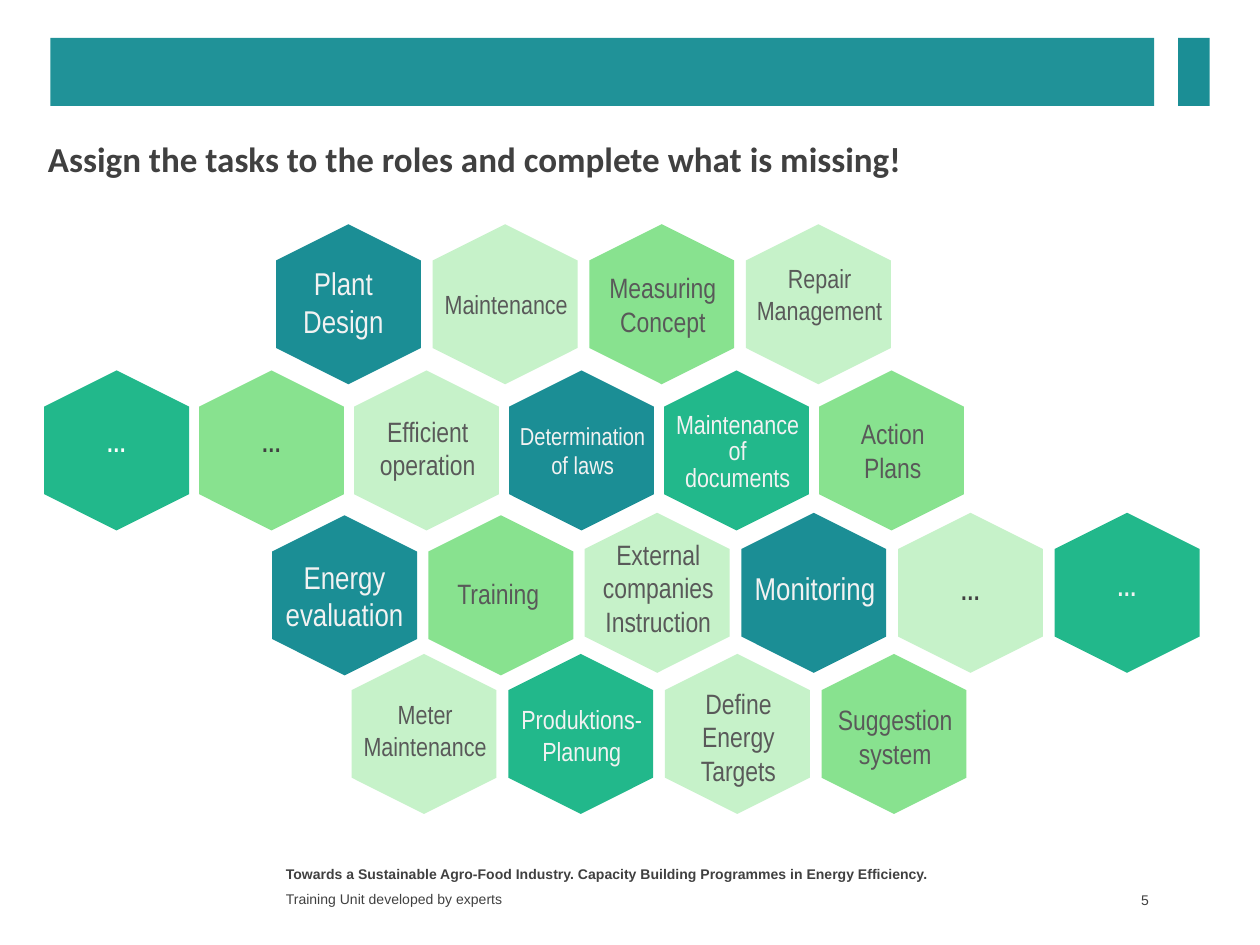
from dataclasses import dataclass
from typing import Optional

from pptx import Presentation
from pptx.dml.color import RGBColor
from pptx.enum.shapes import MSO_SHAPE
from pptx.enum.text import MSO_ANCHOR, PP_ALIGN
from pptx.util import Inches, Pt

TEAL, GREEN, LIME, MINT = "1B8E95", "22B88B", "88E28F", "C6F2C9"
DARK, GREY, PALE = "404040", "595959", "F2F2F2"
HEX_W, HEX_H = 1.27, 1.15
WIDE, NARROW = 1.36, 1.12


@dataclass
class Tile:
    fill: str
    text: str
    size: int = 16
    dy: float = 0
    dx: float = 0.01
    color: Optional[str] = None
    bold: bool = False
    spacing: Optional[int] = None


def dots(fill, color, dy):
    return Tile(fill, "…", 14, dy, 0, color, True)


ROWS = [
    ((2.13, 1.84, 5.0, HEX_H), [
        Tile(TEAL, "Plant Design", 18, -0.02, -0.04),
        Tile(MINT, "Maintenance", 15),
        Tile(LIME, "Measuring\nConcept"),
        Tile(MINT, "Repair\nManagement", 15, -0.08),
    ]),
    ((0.29, 3.0, 7.42, HEX_H), [
        dots(GREEN, "FFFFFF", -0.06),
        dots(LIME, DARK, -0.06),
        Tile(MINT, "Efficient\noperation", dy=-0.02),
        Tile(TEAL, "Determination\nof laws", 14),
        Tile(GREEN, "Maintenance\nof\ndocuments", 15, 0.02, spacing=15),
        Tile(LIME, "Action Plans"),
    ]),
    ((2.1, 4.15, 2.51, HEX_H), [
        Tile(TEAL, "Energy\nevaluation", 18, dx=0),
        Tile(LIME, "Training", dy=-0.02, dx=-0.02),
    ]),
    ((4.58, 4.13, 5.0, HEX_H), [
        Tile(MINT, "External\ncompanies\nInstruction", dy=-0.04),
        Tile(TEAL, "Monitoring", 18, -0.04),
        dots(MINT, DARK, -0.02),
        dots(GREEN, PALE, -0.05),
    ]),
    ((2.73, 5.25, 5.0, HEX_H), [
        Tile(MINT, "Meter\nMaintenance", 15, -0.03),
        Tile(GREEN, "Produktions-\nPlanung", 15, 0.01),
        Tile(MINT, "Define\nEnergy\nTargets", dy=0.02),
        Tile(LIME, "Suggestion\nsystem", dy=0.02),
    ]),
]


def rgb(value):
    return RGBColor.from_string(value)


def inches(box):
    return [Inches(v) for v in box]


def add_block(s, kind, box, fill):
    sp = s.shapes.add_shape(kind, *inches(box))
    sp.shadow.inherit = False
    sp.fill.solid()
    sp.fill.fore_color.rgb = rgb(fill)
    sp.line.fill.background()
    return sp


def write(sp, text, size, color, font="Arial", bold=False,
          align=PP_ALIGN.LEFT, anchor=MSO_ANCHOR.TOP, spacing=None):
    tf = sp.text_frame
    tf.word_wrap = True
    tf.vertical_anchor = anchor
    tf.text = text
    for p in tf.paragraphs:
        p.alignment = align
        p.font.size = Pt(size)
        p.font.name = font
        p.font.bold = bold
        p.font.color.rgb = rgb(color)
        if spacing:
            p.line_spacing = Pt(spacing)


def add_text(s, box, *args, **kwargs):
    sp = s.shapes.add_textbox(*inches(box))
    write(sp, *args, **kwargs)
    return sp


def add_header(s, box):
    left, top, width, height = box
    mark = 0.25
    add_block(s, MSO_SHAPE.RECTANGLE, (left, top, 8.76, height), "209298")
    add_block(s, MSO_SHAPE.RECTANGLE,
              (left + width - mark, top, mark, height), TEAL)


def add_title(s, box, text):
    title = s.shapes.title
    title.left, title.top, title.width, title.height = inches(box)
    write(title, text, 20, DARK, "Calibri", True)


def add_tile(s, box, tile):
    left, top, width, height = box
    hexagon = add_block(s, MSO_SHAPE.HEXAGON, box, tile.fill)
    hexagon.rotation = 90
    color = tile.color or (PALE if tile.fill in (TEAL, GREEN) else GREY)
    lines = tile.text.split("\n")
    wraps = len(lines) == 1 and " " in tile.text
    label_w = NARROW if wraps else WIDE
    count = 2 if wraps else len(lines)
    label_h = count * (tile.spacing or tile.size * 1.2) / 72 + 0.1
    add_text(s, (left + (width - label_w) / 2 + tile.dx,
                 top + (height - label_h) / 2 + tile.dy, label_w, label_h),
             tile.text, tile.size, color, "Arial Narrow", tile.bold,
             PP_ALIGN.CENTER, MSO_ANCHOR.MIDDLE, tile.spacing)


def add_tile_row(s, box, tiles):
    left, top, width, height = box
    step = (width - HEX_W) / (len(tiles) - 1)
    for i, tile in enumerate(tiles):
        add_tile(s, (left + i * step, top, HEX_W, height), tile)


def add_footer(s, box):
    left, top, width, height = box
    text_w, line_h, number_w = 5.5, height / 2, 0.56
    add_text(s, (left, top, text_w, line_h),
             "Towards a Sustainable Agro-Food Industry. "
             "Capacity Building Programmes in Energy Efficiency.",
             8, DARK, bold=True)
    add_text(s, (left, top + line_h, text_w, line_h),
             "Training Unit developed by experts", 8, DARK,
             anchor=MSO_ANCHOR.MIDDLE)
    number = add_text(s, (left + width - number_w, top + line_h,
                          number_w, line_h),
                      "5", 8, DARK, align=PP_ALIGN.RIGHT)
    number.text_frame.margin_right = Inches(0.04)


def main():
    prs = Presentation()
    prs.slide_width, prs.slide_height = Inches(10), Inches(7.5)
    s = prs.slides.add_slide(prs.slide_layouts[5])
    add_header(s, (0.4, 0.3, 9.2, 0.54))
    add_title(s, (0.28, 1.04, 9, 0.41),
              "Assign the tasks to the roles and complete what is missing!")
    for box, tiles in ROWS:
        add_tile_row(s, box, tiles)
    add_footer(s, (2.17, 6.82, 6.99, 0.42))
    prs.save("out.pptx")


if __name__ == "__main__":
    main()
